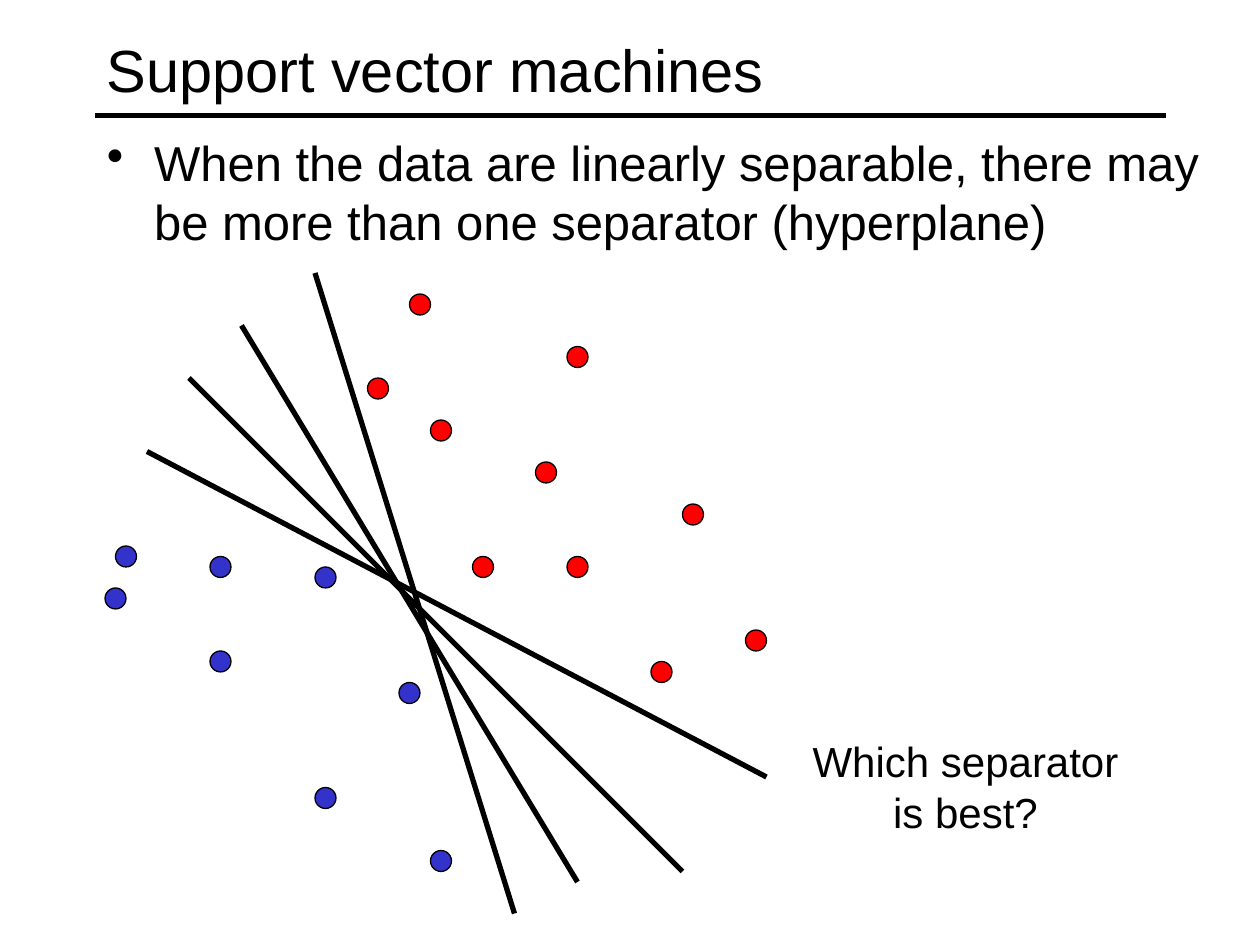
"""Build a slide on the choice of separator for linearly separable data."""
from pptx import Presentation
from pptx.dml.color import RGBColor
from pptx.enum.shapes import MSO_CONNECTOR as Connector, MSO_SHAPE as Shape
from pptx.enum.text import MSO_ANCHOR as Anchor, PP_ALIGN as Align
from pptx.oxml.ns import qn
from pptx.util import Pt
from lxml.etree import SubElement

BLACK = RGBColor(0x00, 0x00, 0x00)
WHITE = RGBColor(0xFF, 0xFF, 0xFF)
RED = RGBColor(0xFF, 0x00, 0x00)
BLUE = RGBColor(0x33, 0x33, 0xCC)

BLUE_DOTS = [(66, 312), (120, 318), (120, 372), (60, 336), (180, 324),
             (228, 390), (180, 450), (246, 486)]
RED_DOTS = [(246, 240), (306, 264), (324, 318), (270, 318), (210, 216),
            (372, 378), (390, 288), (324, 198), (426, 360), (234, 168)]
SEPARATORS = [((108, 216), (390, 498)), ((138, 186), (330, 504)),
              ((180, 156), (294, 522)), ((84, 258), (438, 444))]


class Painter:
    font = "Arial"
    dot_size = 12
    indent = 27

    def __init__(self, page):
        self.page = page

    def text(self, words, left, top, width, height, size,
             anchor=Anchor.TOP, align=Align.LEFT, wrap=True):
        box = self.page.shapes.add_textbox(Pt(left), Pt(top), Pt(width), Pt(height))
        frame = box.text_frame
        frame.word_wrap = wrap
        frame.vertical_anchor = anchor
        para = frame.paragraphs[0]
        para.text = words
        para.alignment = align
        para.font.name = self.font
        para.font.size = Pt(size)
        para.font.color.rgb = BLACK
        return para

    def bullet(self, words, left, top, width, height, size):
        para = self.text(words, left, top, width, height, size)
        para.space_before = Pt(size * 0.2)
        properties = para._p.get_or_add_pPr()
        properties.set("marL", str(Pt(self.indent)))
        properties.set("indent", str(-Pt(self.indent)))
        mark = properties.makeelement(qn("a:buChar"), {"char": "•"})
        properties.find(qn("a:defRPr")).addprevious(mark)

    def line(self, start, end):
        ends = [Pt(value) for value in (*start, *end)]
        line = self.page.shapes.add_connector(Connector.STRAIGHT, *ends)
        line.line.color.rgb = BLACK
        line.line.width = Pt(3)
        SubElement(line._element.spPr, qn("a:effectLst"))

    def dot(self, left, top, color):
        size = Pt(self.dot_size)
        dot = self.page.shapes.add_shape(Shape.OVAL, Pt(left), Pt(top), size, size)
        dot.shadow.inherit = False
        dot.fill.solid()
        dot.fill.fore_color.rgb = color
        dot.line.color.rgb = BLACK
        dot.line.width = Pt(0.75)


def main():
    deck = Presentation()
    deck.slide_width, deck.slide_height = Pt(720), Pt(540)
    page = deck.slides.add_slide(deck.slide_layouts[6])
    page.background.fill.solid()
    page.background.fill.fore_color.rgb = WHITE
    painter = Painter(page)

    painter.line((54, 66), (666, 66))
    painter.text("Support vector machines", 54, 6, 612, 66, 34, anchor=Anchor.MIDDLE)
    painter.bullet("When the data are linearly separable, there may be more than "
                   "one separator (hyperplane)", 54, 72, 648, 414, 28)
    for color, dots in ((BLUE, BLUE_DOTS), (RED, RED_DOTS)):
        for left, top in dots:
            painter.dot(left, top, color)
    for start, end in SEPARATORS:
        painter.line(start, end)
    painter.text("Which separator\nis best?", 456.5, 417, 190.5, 65.5, 24,
                 align=Align.CENTER, wrap=False)
    deck.save("out.pptx")


if __name__ == "__main__":
    main()
